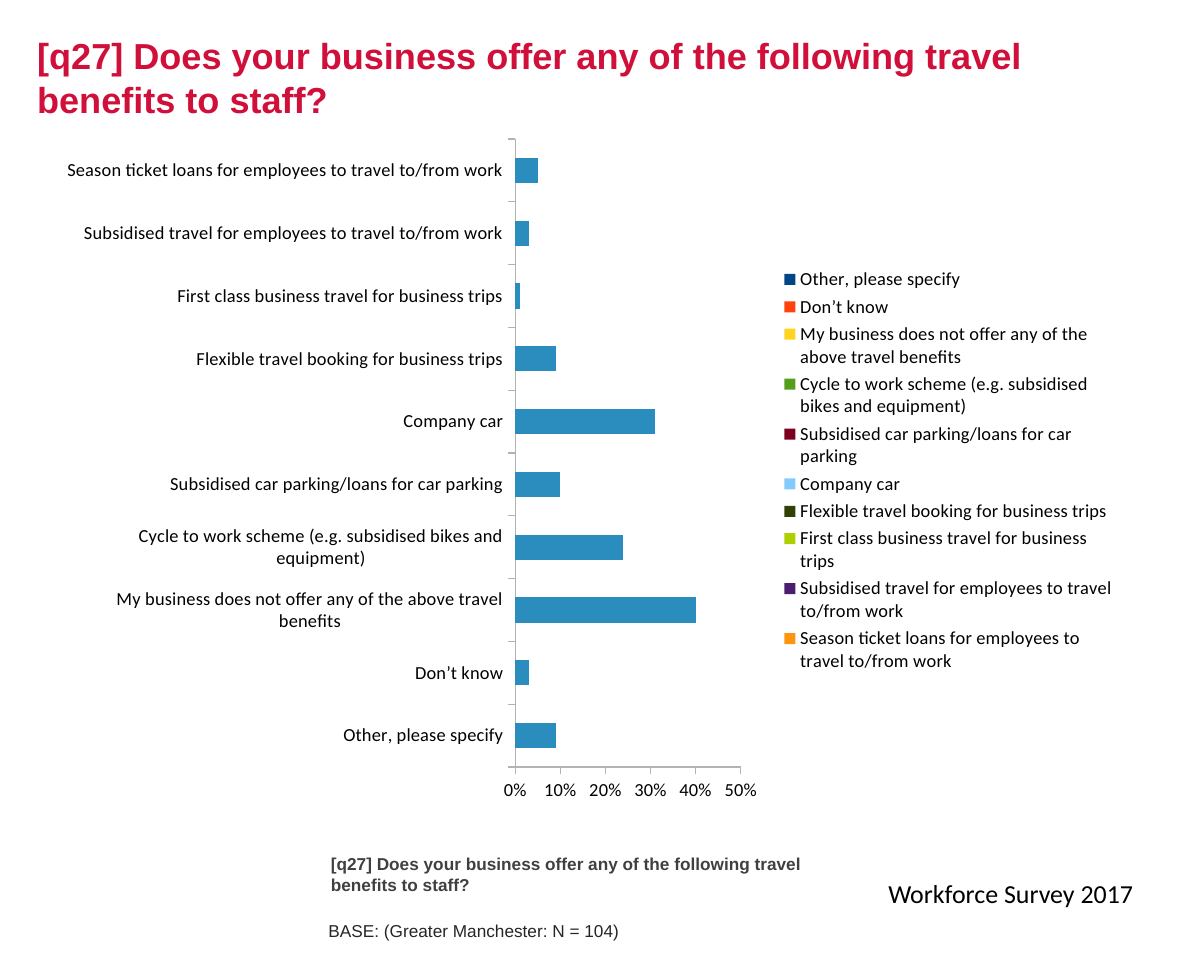
from pptx import Presentation
from pptx.chart.data import CategoryChartData
from pptx.dml.color import RGBColor
from pptx.enum.chart import XL_CHART_TYPE as CT, XL_LEGEND_POSITION as LP, XL_TICK_MARK as TM
from pptx.enum.text import MSO_ANCHOR as MA
from pptx.util import Inches, Pt

QUESTION = "[q27] Does your business offer any of the following travel benefits to staff?"
BENEFITS = [
    ("Other, please specify", 0.09),
    ("Don’t know", 0.03),
    ("My business does not offer any of the above travel benefits", 0.4),
    ("Cycle to work scheme (e.g. subsidised bikes and equipment)", 0.24),
    ("Subsidised car parking/loans for car parking", 0.1),
    ("Company car", 0.31),
    ("Flexible travel booking for business trips", 0.09),
    ("First class business travel for business trips", 0.01),
    ("Subsidised travel for employees to travel to/from work", 0.03),
    ("Season ticket loans for employees to travel to/from work", 0.05),
]


def rgb(color):
    """Turn a hex string into a colour."""
    return RGBColor.from_string(color)


def set_font(font, name, size, color, bold=False):
    """Set the typeface, size, colour and weight of a font."""
    font.name, font.size, font.bold = name, Pt(size), bold
    font.color.rgb = rgb(color)


def add_text(s, box, text, name, size, color, bold=False, anchor=MA.TOP):
    """Add a wrapped text box with one paragraph."""
    tf = s.shapes.add_textbox(*map(Inches, box)).text_frame
    tf.word_wrap = True
    tf.vertical_anchor = anchor
    tf.text = text
    set_font(tf.paragraphs[0].runs[0].font, name, size, color, bold)


def style_axis(axis):
    """Give an axis a thin grey line, outer ticks and no gridlines."""
    axis.has_major_gridlines = False
    axis.major_tick_mark, axis.minor_tick_mark = TM.OUTSIDE, TM.NONE
    axis.format.line.color.rgb = rgb("B3B3B3")
    axis.format.line.width = Pt(0.75)


def add_benefits_chart(s, box):
    """Add the bar chart of travel benefits with a legend of categories."""
    data = CategoryChartData(number_format="0%")
    data.categories = [label for label, _ in BENEFITS]
    data.add_series("Greater Manchester", [share for _, share in BENEFITS])
    chart = s.shapes.add_chart(CT.BAR_CLUSTERED, *map(Inches, box), data).chart
    set_font(chart.font, "Calibri", 11, "000000")
    chart.has_title = False
    chart.has_legend = True
    chart.legend.position = LP.RIGHT
    chart.legend.include_in_layout = False
    for axis in (chart.category_axis, chart.value_axis):
        style_axis(axis)
    labels = chart.value_axis.tick_labels
    labels.number_format, labels.number_format_is_linked = "0%", False
    plot = chart.plots[0]
    plot.gap_width = 150
    plot.vary_by_categories = True
    fill = plot.series[0].format.fill
    fill.solid()
    fill.fore_color.rgb = rgb("2B8CBE")


def main():
    """Build the survey slide and save it."""
    prs = Presentation()
    prs.slide_width, prs.slide_height = Inches(10), Inches(8.07)
    s = prs.slides.add_slide(prs.slide_layouts[6])
    add_text(s, (0.21, 0.2, 9.51, 0.88), QUESTION, "Arial", 21.6, "D0103A", True, MA.MIDDLE)
    add_text(s, (7.28, 7.24, 2.43, 0.36), "Workforce Survey 2017", "Calibri", 15.5, "000000")
    add_text(s, (2.65, 7.11, 4.6, 0.37), QUESTION, "Arial", 10.3, "404040", True, MA.BOTTOM)
    add_text(s, (2.63, 7.48, 4.6, 0.38), "BASE: (Greater Manchester: N = 104)", "Arial", 10.3, "262626",
             anchor=MA.BOTTOM)
    add_benefits_chart(s, (0.52, 1.04, 8.85, 5.73))
    prs.save("out.pptx")


if __name__ == "__main__":
    main()
